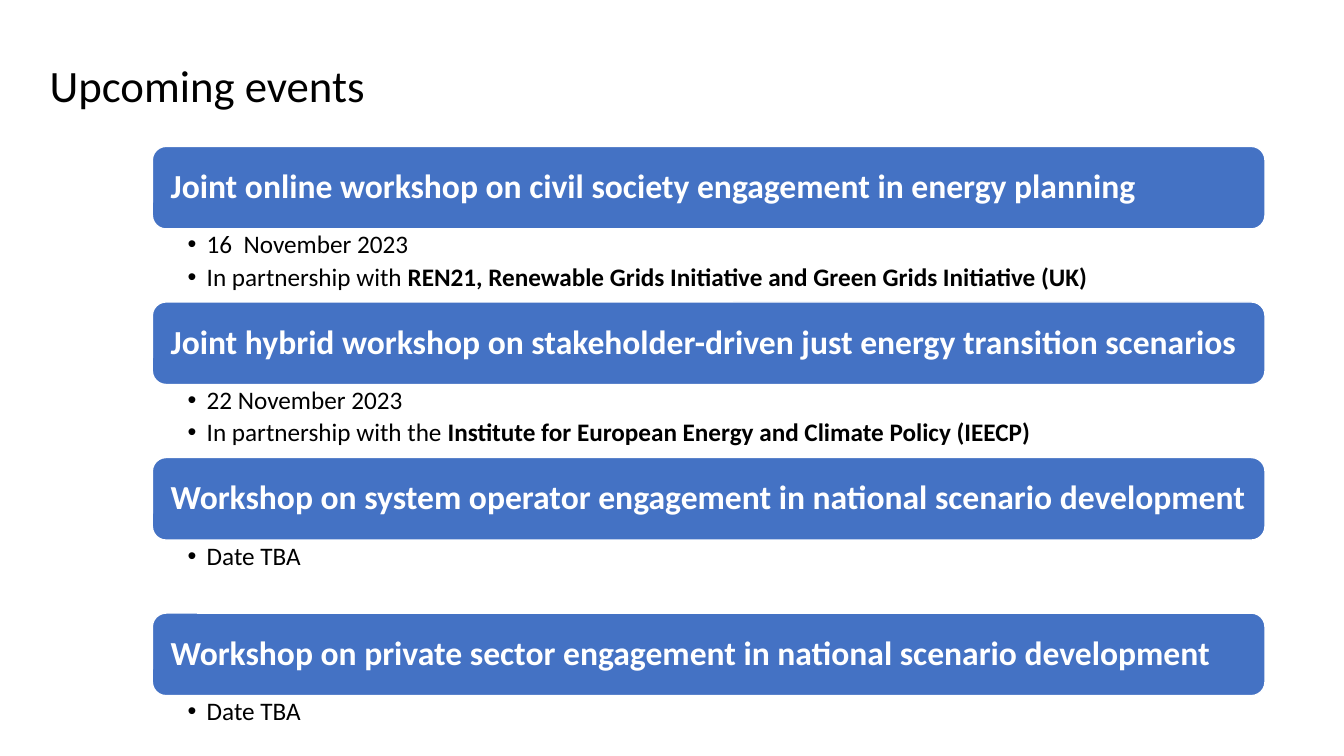
from lxml.etree import SubElement
from pptx import Presentation
from pptx.dml.color import RGBColor
from pptx.enum.shapes import MSO_SHAPE
from pptx.enum.text import MSO_ANCHOR, MSO_AUTO_SIZE, PP_ALIGN
from pptx.oxml.ns import qn
from pptx.util import Cm, Pt

TITLE = "Upcoming events"
# Each event: heading, then detail lines as (plain text, bold text)
EVENTS = [
    ("Joint online workshop on civil society engagement in energy planning",
     [("16  November 2023", ""),
      ("In partnership with ",
       "REN21, Renewable Grids Initiative and Green Grids Initiative (UK)")]),
    ("Joint hybrid workshop on stakeholder-driven just energy transition scenarios",
     [("22 November 2023", ""),
      ("In partnership with the ",
       "Institute for European Energy and Climate Policy (IEECP)")]),
    ("Workshop on system operator engagement in national scenario development",
     [("Date TBA", "")]),
    ("Workshop on private sector engagement in national scenario development",
     [("Date TBA", "")]),
]

FONT = "Calibri"
BLACK, WHITE, BLUE = "000000", "FFFFFF", "4472C4"
LEFT, WIDTH = 3.84, 28.04
FIRST_TOP, EVENT_PITCH = 3.69, 3.92
BAND_HEIGHT, DETAILS_HEIGHT = 2.08, 1.83
BULLET_INDENT = 0.48
COMPARISON_LAYOUT = 4  # a title and four body placeholders


def color(hex_string):
    return RGBColor.from_string(hex_string)


def place(shape, left, top, width, height):
    """Set position and size in centimetres."""
    shape.left, shape.top = Cm(left), Cm(top)
    shape.width, shape.height = Cm(width), Cm(height)


def add_bullet(paragraph):
    properties = paragraph._p.get_or_add_pPr()
    properties.set("marL", str(Cm(BULLET_INDENT)))
    properties.set("indent", str(-Cm(BULLET_INDENT)))
    SubElement(properties, qn("a:buFont"), typeface="Arial")
    SubElement(properties, qn("a:buChar"), char="•")


def write(shape, lines, size, font_color=BLACK, bold=False, bullet=False,
          space_after=0, anchor=MSO_ANCHOR.MIDDLE, insets=(0.25, 0.13, 0.25, 0.13)):
    """Fill a shape with lines of (plain text, bold text)."""
    frame = shape.text_frame
    frame.word_wrap = True
    frame.auto_size = MSO_AUTO_SIZE.NONE
    frame.vertical_anchor = anchor
    (frame.margin_left, frame.margin_top,
     frame.margin_right, frame.margin_bottom) = map(Cm, insets)
    for index, (plain, strong) in enumerate(lines):
        paragraph = frame.add_paragraph() if index else frame.paragraphs[0]
        if bullet:
            add_bullet(paragraph)
        paragraph.alignment = PP_ALIGN.LEFT
        paragraph.line_spacing = 0.9
        paragraph.space_before = Pt(0)
        paragraph.space_after = Pt(space_after)
        for text, is_bold in ((plain, bold), (strong, True)):
            if text:
                run = paragraph.add_run()
                run.text = text
                run.font.name = FONT
                run.font.size = Pt(size)
                run.font.bold = is_bold
                run.font.color.rgb = color(font_color)


def add_band(slide, heading, top):
    band = slide.shapes.add_shape(MSO_SHAPE.ROUNDED_RECTANGLE, Cm(LEFT), Cm(top),
                                  Cm(WIDTH), Cm(BAND_HEIGHT))
    band.shadow.inherit = False
    band.fill.solid()
    band.fill.fore_color.rgb = color(BLUE)
    band.line.color.rgb = color(WHITE)
    band.line.width = Pt(1)
    write(band, [(heading, "")], size=24, font_color=WHITE, bold=True,
          insets=(0.36, 0.25, 0.2, 0.25))


def main():
    presentation = Presentation()
    presentation.slide_width, presentation.slide_height = Cm(33.87), Cm(19.05)
    slide = presentation.slides.add_slide(presentation.slide_layouts[COMPARISON_LAYOUT])

    title, *details_boxes = slide.placeholders
    place(title, 1.0, 1.65, 27.46, 1.14)
    write(title, [(TITLE, "")], size=32)

    for index, (details_box, (heading, details)) in enumerate(zip(details_boxes, EVENTS)):
        top = FIRST_TOP + index * EVENT_PITCH
        add_band(slide, heading, top)
        place(details_box, LEFT, top + BAND_HEIGHT, WIDTH, DETAILS_HEIGHT)
        write(details_box, details, size=18, bullet=True, space_after=3.6,
              anchor=MSO_ANCHOR.TOP, insets=(0.89, 0.08, 0.36, 0.08))

    presentation.save("out.pptx")


if __name__ == "__main__":
    main()
